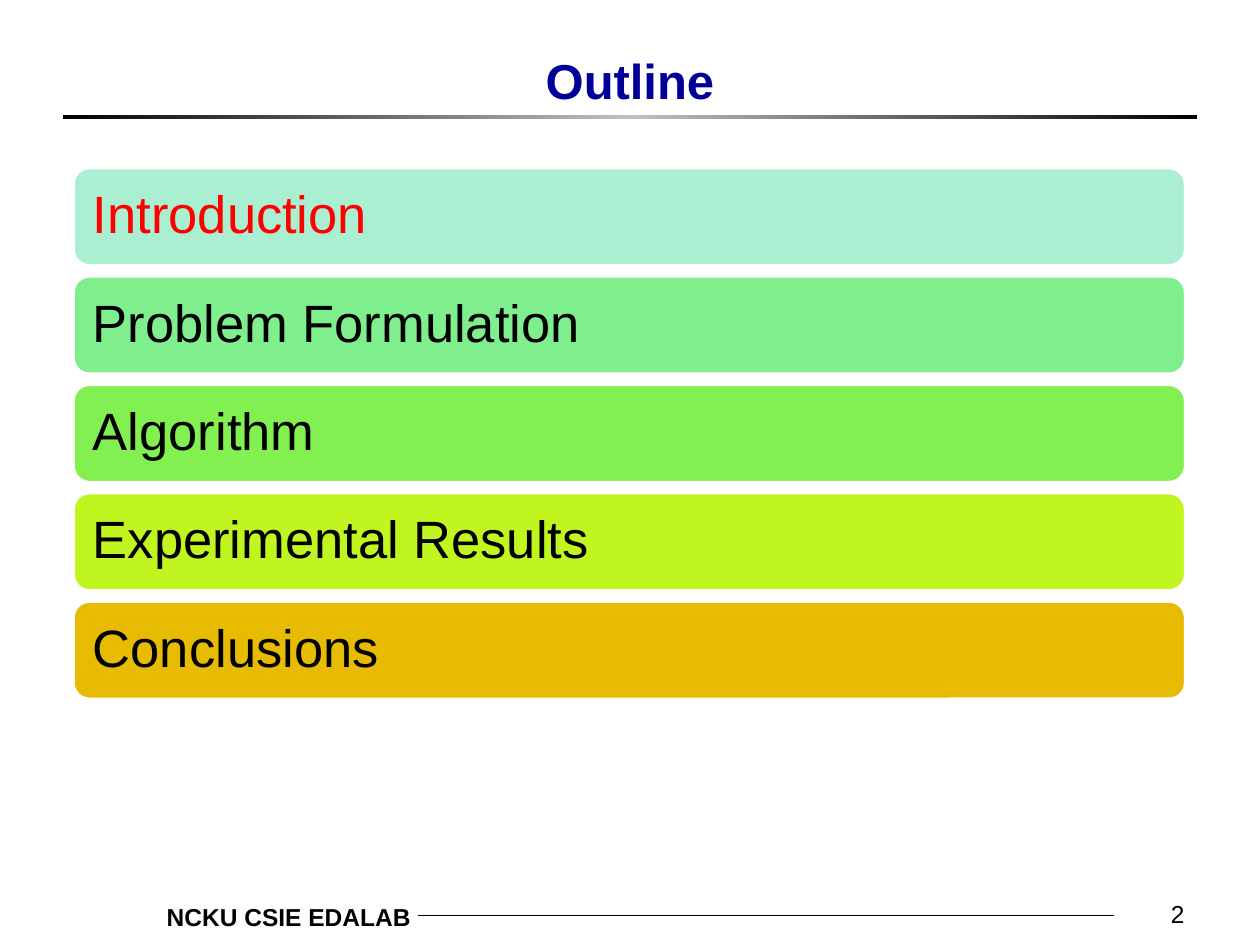
import copy
import pptx
import pptx.dml.color
import pptx.enum.shapes
import pptx.enum.text
import pptx.oxml.ns
import pptx.util
from lxml import etree

COLORS = {
    "black": "000000", "silver": "C0C0C0", "white": "FFFFFF",
    "title": "000099", "current": "FF0000",
    "mint": "AAEFD1", "green": "7FEE8D", "lime": "83F051",
    "yellow": "C0F51F", "gold": "E7BB01",
}
COLUMNS, ROWS = 100, 75
TOPICS = [
    ("Introduction", "mint", "current"),
    ("Problem Formulation", "green", "black"),
    ("Algorithm", "lime", "black"),
    ("Experimental Results", "yellow", "black"),
    ("Conclusions", "gold", "black"),
]
ALIGN = pptx.enum.text.PP_ALIGN
ANCHOR = pptx.enum.text.MSO_ANCHOR
SHAPE = pptx.enum.shapes.MSO_SHAPE
qn = pptx.oxml.ns.qn


def rgb(name):
    return pptx.dml.color.RGBColor.from_string(COLORS[name])


def set_values(obj, values):
    for name, value in values.items():
        setattr(obj, name, value)


class Deck:
    font = "Arial"

    def __init__(self):
        self.prs = pptx.Presentation()
        set_values(self.prs, {"slide_width": pptx.util.Inches(10),
                              "slide_height": pptx.util.Inches(7.5)})
        self.slide = None

    def x(self, columns):
        return round(self.prs.slide_width * columns / COLUMNS)

    def y(self, rows):
        return round(self.prs.slide_height * rows / ROWS)

    def frame(self, left, top, width, height):
        return self.x(left), self.y(top), self.x(width), self.y(height)

    def set_text(self, sp, text, size, color="black", bold=False,
                 align=ALIGN.LEFT, anchor=ANCHOR.TOP, inset=(0.1, 0.05), spacing=1.0):
        tf = sp.text_frame
        side, end = (pptx.util.Inches(v) for v in inset)
        set_values(tf, {"word_wrap": True, "vertical_anchor": anchor,
                        "auto_size": pptx.enum.text.MSO_AUTO_SIZE.NONE,
                        "margin_left": side, "margin_right": side,
                        "margin_top": end, "margin_bottom": end})
        p = tf.paragraphs[0]
        set_values(p, {"alignment": align, "line_spacing": spacing})
        r = p.add_run()
        r.text = text
        set_values(r.font, {"name": self.font, "size": pptx.util.Pt(size), "bold": bold})
        r.font.color.rgb = rgb(color)

    def title(self, text, *box):
        self.slide = self.prs.slides.add_slide(self.prs.slide_layouts[5])
        sp = self.slide.shapes.title
        set_values(sp, dict(zip(("left", "top", "width", "height"), self.frame(*box))))
        self.set_text(sp, text, 28, "title", True, ALIGN.CENTER, ANCHOR.BOTTOM)

    def text(self, text, *box, **style):
        sp = self.slide.shapes.add_textbox(*self.frame(*box))
        self.set_text(sp, text, 14, align=ALIGN.RIGHT, **style)

    def shape(self, kind, *box):
        sp = self.slide.shapes.add_shape(kind, *self.frame(*box))
        sp.shadow.inherit = False
        return sp

    def gradient_bar(self, names, *box):
        sp = self.shape(SHAPE.RECTANGLE, *box)
        sp.line.fill.background()
        sp.fill.gradient()
        sp.fill.gradient_angle = 0
        stops = sp.element.spPr.find(".//" + qn("a:gsLst"))
        while len(stops) < len(names):
            stops.append(copy.deepcopy(stops[0]))
        for i, (stop, name) in enumerate(zip(sp.fill.gradient_stops, names)):
            stop.position = i / (len(names) - 1)
            stop.color.rgb = rgb(name)

    def topic(self, text, fill, color, *box):
        sp = self.shape(SHAPE.ROUNDED_RECTANGLE, *box)
        sp.fill.solid()
        sp.fill.fore_color.rgb = rgb(fill)
        sp.line.color.rgb = rgb("white")
        sp.line.width = pptx.util.Pt(2)
        self.set_text(sp, text, 30, color, anchor=ANCHOR.MIDDLE,
                      inset=(0.12, 0.12), spacing=0.9)

    def line(self, left, right, row):
        cn = self.slide.shapes.add_connector(
            pptx.enum.shapes.MSO_CONNECTOR.STRAIGHT,
            self.x(left), self.y(row), self.x(right), self.y(row))
        cn.line.color.rgb = rgb("black")
        cn.line.width = pptx.util.Pt(0.5)
        etree.SubElement(cn.element.spPr, qn("a:effectLst"))


def main():
    deck = Deck()
    deck.title("Outline", 7.5, 0, 85, 9.2)
    deck.gradient_bar(("black", "silver", "black"), 5, 9.15, 90, 0.3)
    deck.line(33.2, 88.4, 72.65)
    deck.text("NCKU CSIE EDALAB", 9.4, 71.1, 24.2, 3.4, bold=True)
    deck.text("2", 74.2, 69.2, 20.8, 5, anchor=ANCHOR.BOTTOM)
    for i, (text, fill, color) in enumerate(TOPICS):
        deck.topic(text, fill, color, 5.8, 13.3 + 8.6 * i, 88.3, 7.8)
    deck.prs.save("out.pptx")


if __name__ == "__main__":
    main()
